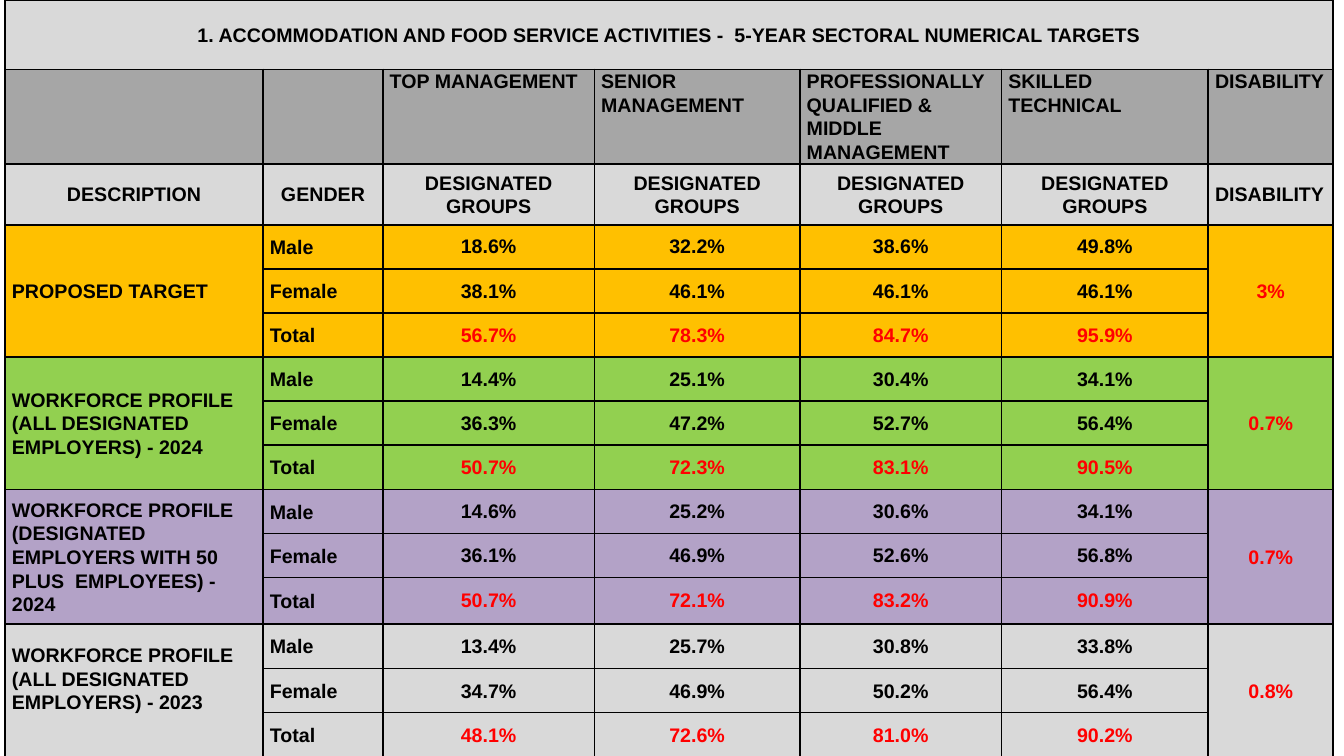
import lxml.etree
import pptx
import pptx.dml.color
import pptx.enum.text
import pptx.oxml.ns
import pptx.util
from pptx.util import Cm

ALIGN = pptx.enum.text.PP_ALIGN
ANCHOR = pptx.enum.text.MSO_ANCHOR

BLACK, RED = "000000", "FF0000"
LIGHT_GREY, DARK_GREY = "D9D9D9", "A6A6A6"

COLUMN_WIDTHS = [6.5, 3.02, 5.33, 5.18, 5.08, 5.21, 3.15]
ROW_HEIGHTS = [1.75, 2.29, 1.55] + [1.11] * 8 + [1.18] + [1.11] * 3

TITLE = "1. ACCOMMODATION AND FOOD SERVICE ACTIVITIES -  5-YEAR SECTORAL NUMERICAL TARGETS"
LEVELS = ["", "", "TOP MANAGEMENT", "SENIOR MANAGEMENT",
          "PROFESSIONALLY QUALIFIED & MIDDLE MANAGEMENT", "SKILLED TECHNICAL", "DISABILITY"]
HEADINGS = ["DESCRIPTION", "GENDER"] + ["DESIGNATED GROUPS"] * 4 + ["DISABILITY"]
GENDERS = ["Male", "Female", "Total"]

# Description, fill, disability share, then one line of values per gender
GROUPS = [
    ("PROPOSED TARGET", "FFC000", "3%",
     ["18.6% 32.2% 38.6% 49.8%", "38.1% 46.1% 46.1% 46.1%", "56.7% 78.3% 84.7% 95.9%"]),
    ("WORKFORCE PROFILE (ALL DESIGNATED EMPLOYERS) - 2024", "92D050", "0.7%",
     ["14.4% 25.1% 30.4% 34.1%", "36.3% 47.2% 52.7% 56.4%", "50.7% 72.3% 83.1% 90.5%"]),
    ("WORKFORCE PROFILE (DESIGNATED EMPLOYERS WITH 50 PLUS  EMPLOYEES) - 2024", "B3A2C7", "0.7%",
     ["14.6% 25.2% 30.6% 34.1%", "36.1% 46.9% 52.6% 56.8%", "50.7% 72.1% 83.2% 90.9%"]),
    ("WORKFORCE PROFILE (ALL DESIGNATED EMPLOYERS) - 2023", LIGHT_GREY, "0.8%",
     ["13.4% 25.7% 30.8% 33.8%", "34.7% 46.9% 50.2% 56.4%", "48.1% 72.6% 81.0% 90.2%"]),
]


def color(value):
    return pptx.dml.color.RGBColor.from_string(value)


def apply_format(target, values):
    for name, value in values.items():
        setattr(target, name, value)


def add_borders(cell):
    properties = cell._tc.get_or_add_tcPr()
    for side in ("a:lnL", "a:lnR", "a:lnT", "a:lnB"):
        line = lxml.etree.SubElement(properties, pptx.oxml.ns.qn(side), w=str(pptx.util.Pt(1.5)))
        fill = lxml.etree.SubElement(line, pptx.oxml.ns.qn("a:solidFill"))
        lxml.etree.SubElement(fill, pptx.oxml.ns.qn("a:srgbClr"), val=BLACK)


def paint(cell, fill):
    add_borders(cell)
    cell.fill.solid()
    cell.fill.fore_color.rgb = color(fill)


def write(cell, text, align=ALIGN.LEFT, font_color=BLACK, anchor=ANCHOR.MIDDLE,
          spacing=1.07, side=0.17, bottom=0):
    apply_format(cell, {"margin_left": Cm(side), "margin_right": Cm(side), "margin_top": 0,
                        "margin_bottom": Cm(bottom), "vertical_anchor": anchor})
    para = cell.text_frame.paragraphs[0]
    apply_format(para, {"alignment": align, "line_spacing": spacing})
    if text:
        span = para.add_run()
        span.text = text
        apply_format(span.font, {"name": "Arial", "size": pptx.util.Pt(14), "bold": True})
        span.font.color.rgb = color(font_color)


def add_grid(page):
    frame = page.shapes.add_table(len(ROW_HEIGHTS), len(COLUMN_WIDTHS), Cm(0.13), Cm(0),
                                  Cm(sum(COLUMN_WIDTHS)), Cm(sum(ROW_HEIGHTS)))
    table = frame.table
    apply_format(table, {"first_row": False, "horz_banding": False})
    for column, width in zip(table.columns, COLUMN_WIDTHS):
        column.width = Cm(width)
    for row, height in zip(table.rows, ROW_HEIGHTS):
        row.height = Cm(height)
    fills = [LIGHT_GREY, DARK_GREY, LIGHT_GREY]
    fills += [group[1] for group in GROUPS for _ in GENDERS]
    for row, fill in zip(table.rows, fills):
        for cell in row.cells:
            paint(cell, fill)
    return table


def fill_headings(table):
    table.cell(0, 0).merge(table.cell(0, len(COLUMN_WIDTHS) - 1))
    write(table.cell(0, 0), TITLE, ALIGN.CENTER)
    for column, (level, heading) in enumerate(zip(LEVELS, HEADINGS)):
        write(table.cell(1, column), level, anchor=ANCHOR.TOP)
        align = ALIGN.LEFT if heading == "DISABILITY" else ALIGN.CENTER
        write(table.cell(2, column), heading, align)


def fill_group(table, top, group):
    description, _, disability, lines = group
    last_column = len(COLUMN_WIDTHS) - 1
    is_last = group is GROUPS[-1]
    for column in (0, last_column):
        table.cell(top, column).merge(table.cell(top + len(GENDERS) - 1, column))
    # The last description sits a little above the middle
    write(table.cell(top, 0), description, bottom=0.6 if is_last else 0)
    write(table.cell(top, last_column), disability, ALIGN.CENTER, RED)
    for row, (gender, line) in enumerate(zip(GENDERS, lines), top):
        write(table.cell(row, 1), gender)
        for column, value in enumerate(line.split(), 2):
            write(table.cell(row, column), value, ALIGN.CENTER,
                  RED if gender == "Total" else BLACK,
                  spacing=1.07 if is_last else 1.0, side=0.17 if is_last else 0.02)


def main():
    deck = pptx.Presentation()
    apply_format(deck, {"slide_width": Cm(33.87), "slide_height": Cm(19.05)})
    page = deck.slides.add_slide(deck.slide_layouts[6])

    # Grid with fills and borders, then its text
    table = add_grid(page)
    fill_headings(table)
    for index, group in enumerate(GROUPS):
        fill_group(table, 3 + index * len(GENDERS), group)

    deck.save("out.pptx")


if __name__ == "__main__":
    main()
